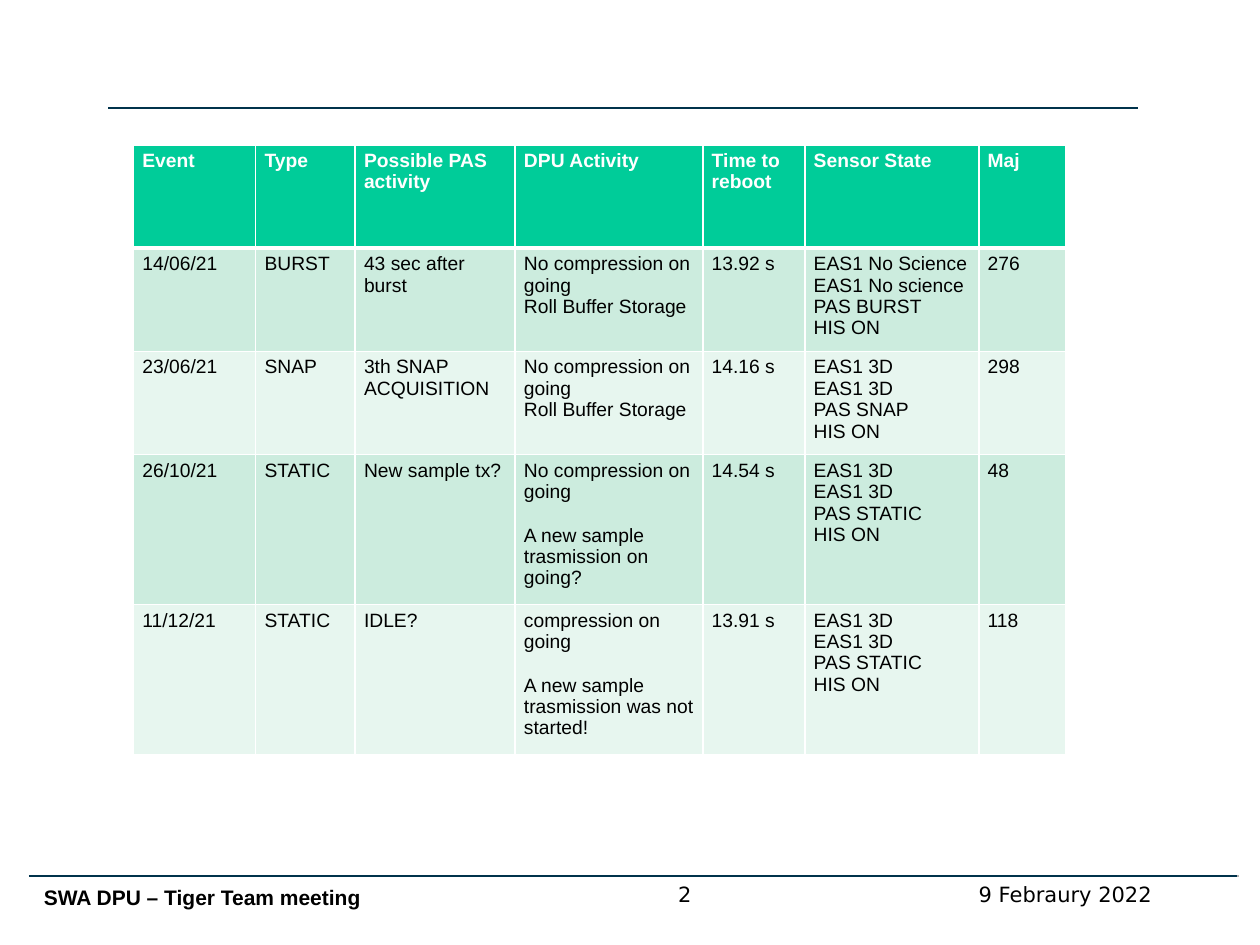
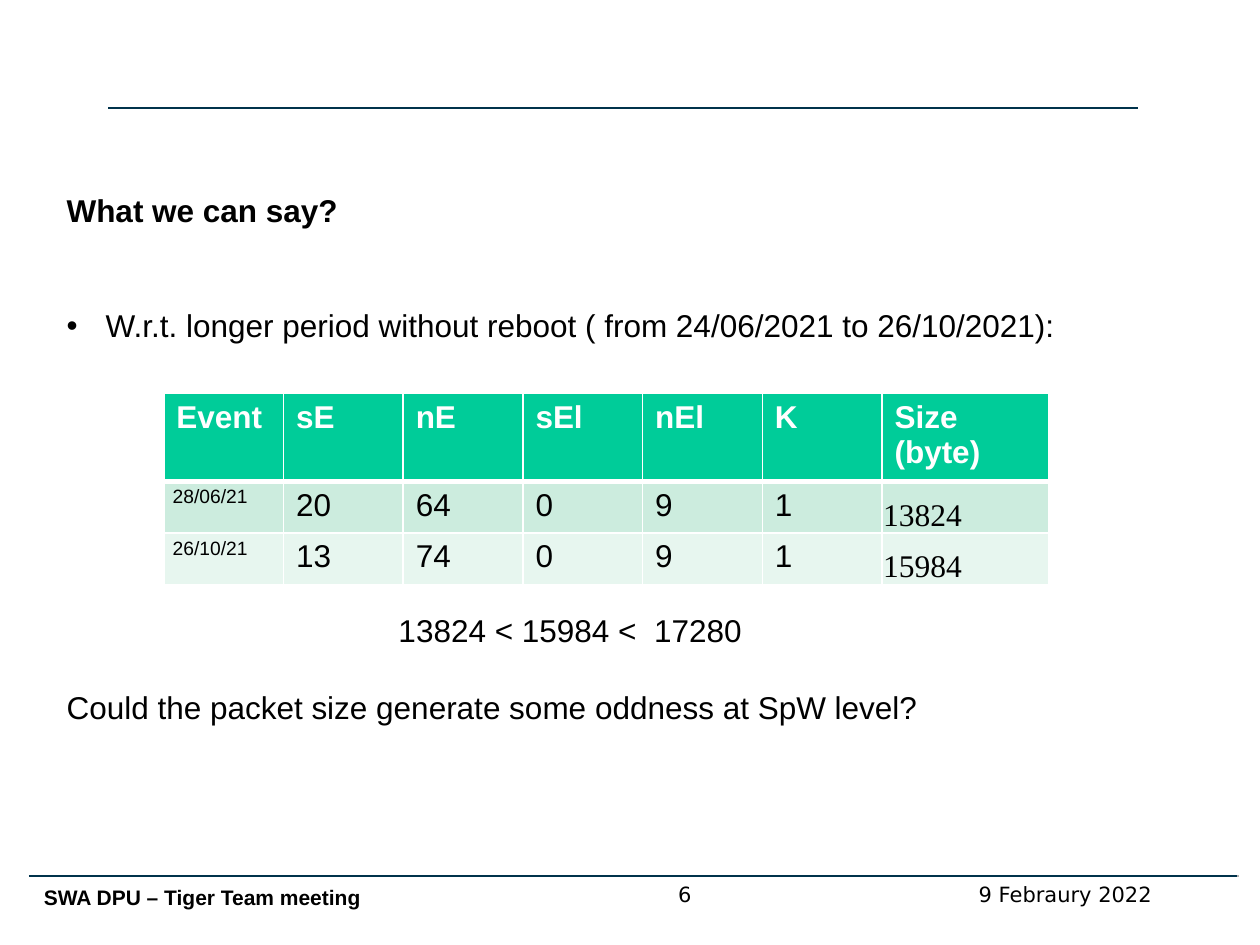
from dataclasses import dataclass
from typing import NamedTuple

from lxml.etree import SubElement as Sub
from pptx import Presentation
from pptx.dml.color import RGBColor as Rgb
from pptx.enum.shapes import MSO_CONNECTOR as Link
from pptx.enum.text import MSO_ANCHOR as Anchor, PP_ALIGN as Align
from pptx.oxml.ns import qn
from pptx.util import Emu, Inches, Pt


@dataclass(frozen=True)
class Theme:
    """Colours, fonts and type sizes of the deck."""
    ink: str = "000000"
    paper: str = "FFFFFF"
    rule: str = "00324B"
    shade: str = "B2B2B2"
    head: str = "00CC99"
    bands: tuple[str, str] = ("CCECDE", "E7F6EF")
    sans: str = "Arial"
    foot: str = "DejaVu Sans"
    serif: str = "Times New Roman"
    small: float = 11
    note: float = 12
    body: float = 18
    thin: float = 1
    thick: float = 3


class Box(NamedTuple):
    """A place on the grid: column, row, columns wide, rows high."""
    col: float
    row: float
    wide: float
    high: float


class Look(NamedTuple):
    """Type and padding of a text frame, padding in grid cells."""
    size: float
    font: str
    side: float = 1
    top: float = 0.5
    base: float = 0.5
    anchor: Anchor = Anchor.TOP


class Para(NamedTuple):
    """One paragraph with its space before in points."""
    text: str
    gap: float = 0
    bold: bool = False
    align: Align = Align.LEFT
    bullet: bool = False


class Rule(NamedTuple):
    """A level line on the grid."""
    start: float
    end: float
    row: float
    color: str


class Grid(NamedTuple):
    """A table: its corner, tracks, looks and cell text."""
    col: float
    row: float
    cols: list[float]
    rows: list[float]
    top: Look
    looks: list[Look]
    cells: list[list[str]]


T = Theme()
WIDE, HIGH = Inches(10), Inches(7.5)
COLS, ROWS = 100, 75
LINE = 12.6

SMALL = Look(T.small, T.sans, 0.7, 0.4, 0.4)
PLAIN = Look(T.body, T.sans)
BYTES = Look(T.body, T.serif, 0.1, 0.1, 0, Anchor.BOTTOM)
TITLE = Look(T.note, T.sans, top=1.2)
FOOT = Look(T.note, T.foot)

RULES = [
    Rule(2.5, 98.3, 69.5, T.shade),
    Rule(2.3, 98.2, 69.5, T.rule),
    Rule(8.6, 90.3, 8.6, T.rule),
]

EVENTS = Grid(
    10.6, 11.5,
    [9.7, 7.9, 12.7, 14.9, 8.1, 13.8, 6.9],
    [8.2] * 3 + [11.9] * 2,
    SMALL, [SMALL] * 7,
    [
        ["Event", "Type", "Possible PAS activity", "DPU Activity",
         "Time to reboot", "Sensor State", "Maj"],
        ["14/06/21", "BURST", "43 sec after burst",
         "No compression on going\nRoll Buffer Storage", "13.92 s",
         "EAS1 No Science\nEAS1 No science\nPAS BURST\nHIS ON", "276"],
        ["23/06/21", "SNAP", "3th SNAP ACQUISITION",
         "No compression on going\nRoll Buffer Storage", "14.16 s",
         "EAS1 3D\nEAS1 3D\nPAS SNAP\nHIS ON", "298"],
        ["26/10/21", "STATIC", "New sample tx?",
         "No compression on going\n\nA new sample trasmission on going?",
         "14.54 s", "EAS1 3D\nEAS1 3D\nPAS STATIC\nHIS ON", "48"],
        ["11/12/21", "STATIC", "IDLE?",
         "compression on going\n\nA new sample trasmission was not started!",
         "13.91 s", "EAS1 3D\nEAS1 3D\nPAS STATIC\nHIS ON", "118"],
    ],
)

SIZES = Grid(
    13, 31.2,
    [9.5] * 6 + [13.2],
    [4.8, 4.1, 4.1],
    PLAIN, [SMALL] + [PLAIN] * 5 + [BYTES],
    [
        ["Event", "sE", "nE", "sEl", "nEl", "K", "Size (byte)"],
        ["28/06/21", "20", "64", "0", "9", "1", "13824"],
        ["26/10/21", "13", "74", "0", "9", "1", "15984"],
    ],
)

CLAIMS = [
    Para("What we can say?", bold=True),
    Para("W.r.t. longer period without reboot ( from 24/06/2021 to 26/10/2021):",
         44, bullet=True),
    Para("13824 < 15984 <  17280", 152.5, align=Align.CENTER),
    Para("Could the packet size generate some oddness at SpW level?", 22.2),
]


def across(cols: float) -> Emu:
    """Turn columns into a length."""
    return Emu(round(WIDE * cols / COLS))


def down(rows: float) -> Emu:
    """Turn rows into a length."""
    return Emu(round(HIGH * rows / ROWS))


def split(text: str, bold: bool) -> list[Para]:
    """Make paragraphs of lines, with a gap where a line is left out."""
    return [
        Para(line, LINE if part and not spot else 0, bold)
        for part, block in enumerate(text.split("\n\n"))
        for spot, line in enumerate(block.split("\n"))
    ]


def write(frame, paras: list[Para], look: Look, color: str) -> None:
    """Fill a text frame with paragraphs of one look."""
    for spot, para in enumerate(paras):
        item = frame.add_paragraph() if spot else frame.paragraphs[0]
        item.text = para.text
        item.alignment = para.align
        item.space_before = Pt(para.gap)
        if para.bullet:
            props = item._p.get_or_add_pPr()
            dent = across(3.1)
            props.set("marL", str(dent))
            props.set("indent", str(-dent))
            Sub(props, qn("a:buFont"), typeface=T.sans)
            Sub(props, qn("a:buChar"), char="•")
        font = item.font
        font.name, font.size, font.bold = look.font, Pt(look.size), para.bold
        font.color.rgb = Rgb.from_string(color)


def pad(host, look: Look) -> None:
    """Set the margins and anchor of a frame or cell."""
    host.margin_left = host.margin_right = across(look.side)
    host.margin_top, host.margin_bottom = down(look.top), down(look.base)
    host.vertical_anchor = look.anchor


def label(slide, box: Box, paras: list[Para], look: Look) -> None:
    """Add a text box."""
    frame = slide.shapes.add_textbox(
        across(box.col), down(box.row), across(box.wide), down(box.high)
    ).text_frame
    frame.word_wrap = True
    pad(frame, look)
    write(frame, paras, look, T.ink)


def stroke(slide, rule: Rule) -> None:
    """Draw a level line."""
    line = slide.shapes.add_connector(
        Link.STRAIGHT, across(rule.start), down(rule.row),
        across(rule.end), down(rule.row))
    line.line.color.rgb = Rgb.from_string(rule.color)
    line.line.width = Pt(T.thin)
    Sub(line._element.spPr, qn("a:effectLst"))


def edge(cell, row: int) -> None:
    """Give a cell white borders, thick below the header."""
    props = cell._tc.get_or_add_tcPr()
    thick = {"T": row == 1, "B": row == 0}
    for side in "LRTB":
        width = Pt(T.thick if thick.get(side) else T.thin)
        line = Sub(props, qn(f"a:ln{side}"), w=str(width))
        Sub(Sub(line, qn("a:solidFill")), qn("a:srgbClr"), val=T.paper)


def chart(slide, grid: Grid) -> None:
    """Add a table with a header and banded rows."""
    table = slide.shapes.add_table(
        len(grid.rows), len(grid.cols), across(grid.col), down(grid.row),
        across(sum(grid.cols)), down(sum(grid.rows))).table
    for track, wide in zip(table.columns, grid.cols):
        track.width = across(wide)
    for track, high in zip(table.rows, grid.rows):
        track.height = down(high)
    for row, texts in enumerate(grid.cells):
        head = row == 0
        fill = T.head if head else T.bands[(row - 1) % 2]
        for col, text in enumerate(texts):
            cell = table.cell(row, col)
            look = grid.top if head else grid.looks[col]
            edge(cell, row)
            cell.fill.solid()
            cell.fill.fore_color.rgb = Rgb.from_string(fill)
            pad(cell, look)
            write(cell.text_frame, split(text, head), look,
                  T.paper if head else T.ink)


def start(deck, page: int):
    """Add a slide with the shared lines and footer."""
    slide = deck.slides.add_slide(deck.slide_layouts[6])
    for rule in RULES:
        stroke(slide, rule)
    label(slide, Box(2.5, 69, 43, 4),
          [Para("SWA DPU – Tiger Team meeting", bold=True)], TITLE)
    label(slide, Box(71.1, 69.5, 26.9, 3),
          [Para("9 Febraury 2022", align=Align.CENTER)], FOOT)
    label(slide, Box(51.6, 69.5, 5.5, 3.1),
          [Para(str(page), align=Align.CENTER)], FOOT)
    return slide


def main() -> None:
    """Build and save the deck."""
    deck = Presentation()
    deck.slide_width, deck.slide_height = WIDE, HIGH
    chart(start(deck, 2), EVENTS)
    slide = start(deck, 6)
    label(slide, Box(4.3, 14.7, 81.9, 49.5), CLAIMS, PLAIN)
    chart(slide, SIZES)
    deck.save("out.pptx")


if __name__ == "__main__":
    main()
